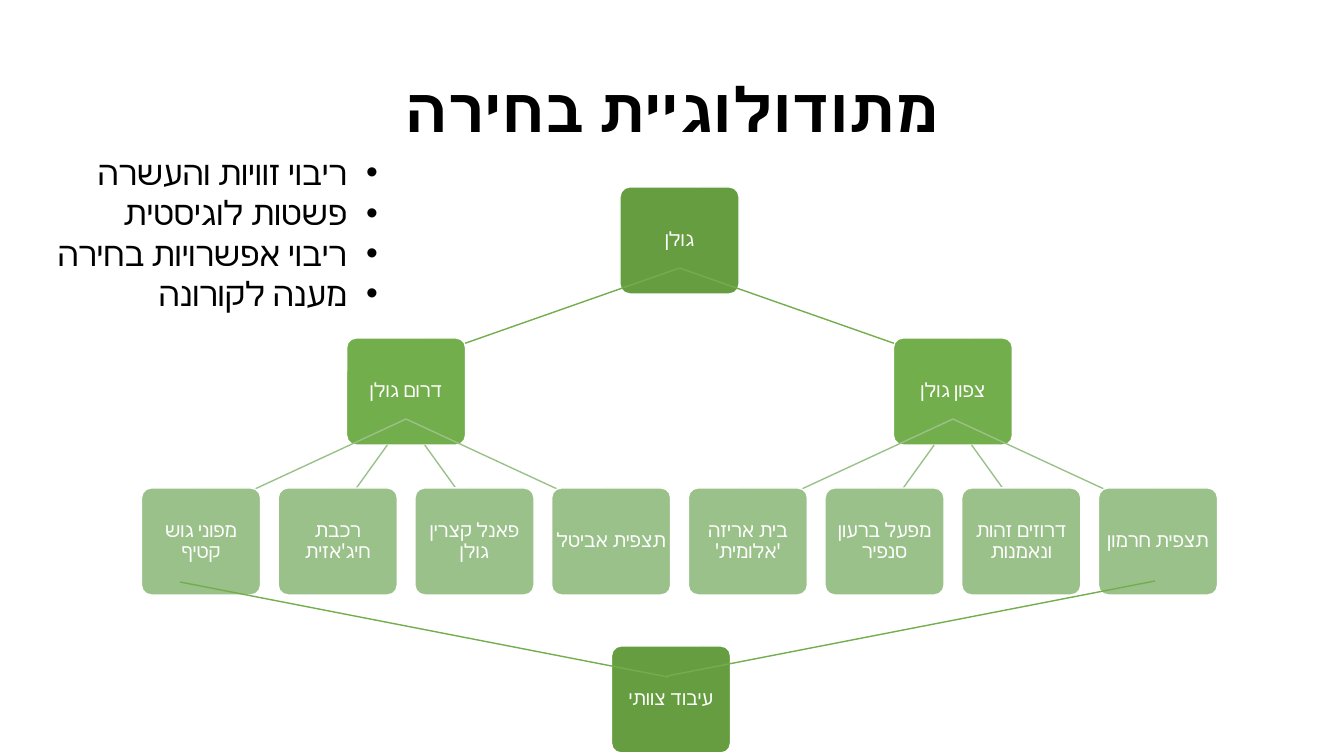
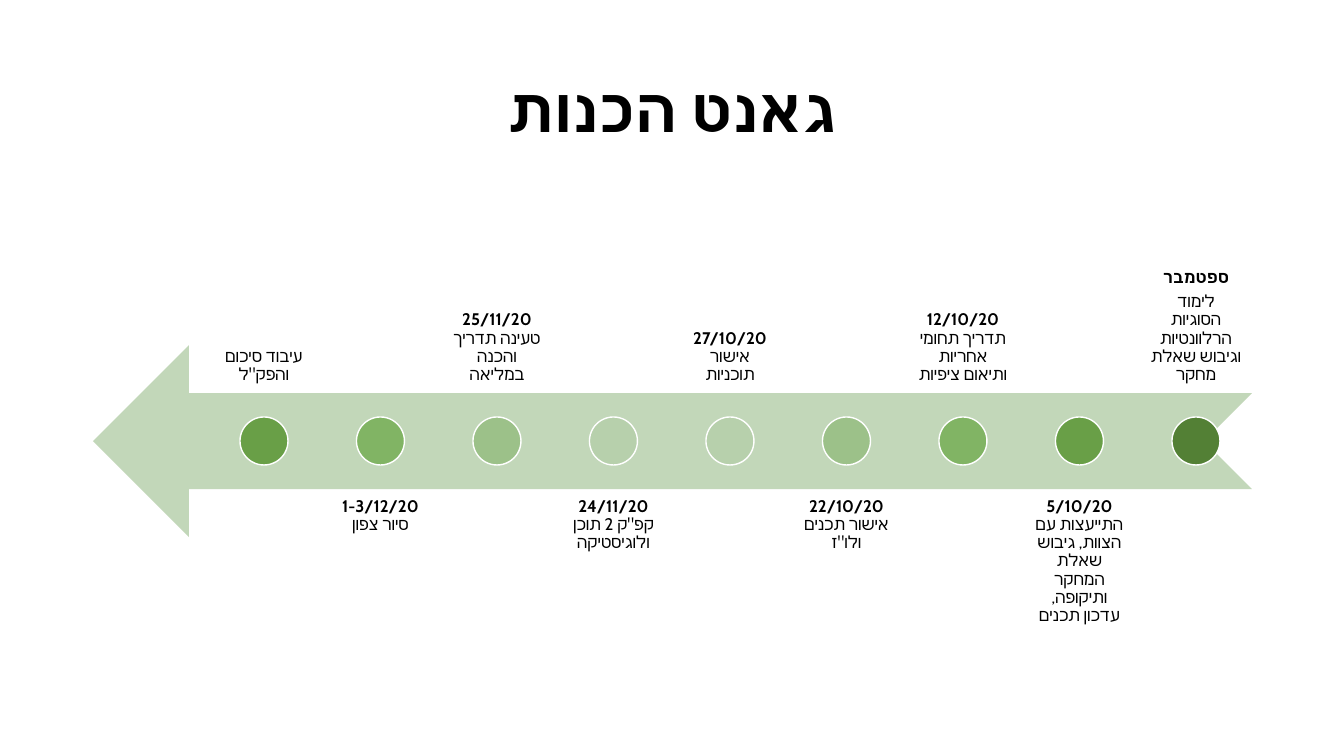
from dataclasses import dataclass

from lxml import etree
from pptx import Presentation
from pptx.dml.color import RGBColor
from pptx.enum.shapes import MSO_CONNECTOR, MSO_SHAPE
from pptx.enum.text import MSO_ANCHOR, MSO_AUTO_SIZE, PP_ALIGN
from pptx.oxml.ns import qn
from pptx.util import Pt

ROUNDED = MSO_SHAPE.ROUNDED_RECTANGLE
ARROW = MSO_SHAPE.NOTCHED_RIGHT_ARROW
OVAL = MSO_SHAPE.OVAL
STRAIGHT = MSO_CONNECTOR.STRAIGHT
TOP, MIDDLE, BOTTOM = MSO_ANCHOR.TOP, MSO_ANCHOR.MIDDLE, MSO_ANCHOR.BOTTOM
NO_AUTOFIT = MSO_AUTO_SIZE.NONE
CENTER, JUSTIFY = PP_ALIGN.CENTER, PP_ALIGN.JUSTIFY

SLIDE_W, SLIDE_H = 1344, 756
SCALE = 12192000 / SLIDE_W


@dataclass(frozen=True)
class Theme:
    font: str = "Cabin"
    text: str = "000000"
    white: str = "FFFFFF"
    root: str = "669D40"
    branch: str = "73AE4C"
    leaf: str = "9BC18A"
    arrow: str = "C2D7B9"
    title_pt: int = 44
    bullet_pt: int = 24
    box_pt: int = 14
    label_pt: int = 12
    line_pt: int = 1
    leading: float = 0.9
    after_pt: float = 4.2


THEME = Theme()

TITLE_BOX = (93, 40, 1159, 146)

METHOD_TITLE = "מתודולוגיית בחירה"
REASONS = [
    "ריבוי זוויות והעשרה",
    "פשטות לוגיסטית",
    "ריבוי אפשרויות בחירה",
    "מענה לקורונה",
]
REASONS_BOX = (14, 147, 374, 173)
REASONS_INDENT = 31
ROOT = "גולן"
REGIONS = [
    ("דרום גולן", ["מפוני גוש קטיף", "רכבת חיג'אזית", "פאנל קצרין גולן", "תצפית אביטל"]),
    ("צפון גולן", ["בית אריזה 'אלומית'", "מפעל ברעון סנפיר", "דרוזים זהות ונאמנות", "תצפית חרמון"]),
]
DEBRIEF = "עיבוד צוותי"
DEBRIEF_X, DEBRIEF_Y = 671, 646
DEBRIEF_LINES = [(667, 676, 1155, 581), (180, 582, 668, 677)]
LEVEL_Y = (187, 338, 488)
LEAF_FIRST_X, LEAF_LAST_X = 201, 1158
BOX_W, BOX_H, BOX_INSET = 119, 107, 0
EDGE_OUT, EDGE_IN = 81, 26

PLAN_TITLE = "גאנט הכנות"
STEPS = [
    ("538035", [("ספטמבר", ""), ("", "לימוד הסוגיות הרלוונטיות וגיבוש שאלת מחקר")]),
    ("699F47", [("5/10/20", "התייעצות עם הצוות, גיבוש שאלת המחקר ותיקופה, עדכון תכנים")]),
    ("81B464", [("12/10/20", "תדריך תחומי אחריות ותיאום ציפיות")]),
    ("9CC189", [("22/10/20", "אישור תכנים ולו\"ז")]),
    ("B7D0AC", [("27/10/20", "אישור תוכניות")]),
    ("B7D0AC", [("24/11/20", "קפ\"ק 2 תוכן ולוגיסטיקה")]),
    ("9CC189", [("25/11/20", "טעינה תדריך והכנה במליאה")]),
    ("81B464", [("1-3/12/20", "סיור צפון")]),
    ("699F47", [("", "עיבוד סיכום והפק\"ל")]),
]
ARROW_BOX = (93, 345, 1159, 192)
STEP_FIRST_X, STEP_LAST_X = 1196, 264
DOT, DOT_Y = 48, 417
LABEL_W, LABEL_H, LABEL_INSET = 111, 192, 10
LABEL_Y = (202, 488)


def px(value):
    return round(value * SCALE)


def rgb(value):
    return RGBColor.from_string(value)


def style_run(r, size, color, bold=False):
    f = r.font
    f.name, f.size, f.bold = THEME.font, Pt(size), bold
    f.color.rgb = rgb(color)
    etree.SubElement(r._r.get_or_add_rPr(), qn("a:cs")).set("typeface", THEME.font)


def style_paragraph(p, align, leading, after=0):
    p.alignment, p.line_spacing = align, leading
    p.space_before, p.space_after = Pt(0), Pt(after)


def set_rtl(p, indent=0):
    pPr = p._p.get_or_add_pPr()
    pPr.set("rtl", "1")
    if indent:
        pPr.set("marL", str(px(indent)))
        pPr.set("indent", str(-px(indent)))


def set_frame(tf, anchor, inset=None):
    tf.word_wrap, tf.auto_size, tf.vertical_anchor = True, NO_AUTOFIT, anchor
    if inset is not None:
        tf.margin_left = tf.margin_right = tf.margin_top = tf.margin_bottom = px(inset)


def place(sp, box):
    sp.left, sp.top, sp.width, sp.height = map(px, box)


def add_slide(prs, layout, title):
    s = prs.slides.add_slide(prs.slide_layouts[layout])
    sp = s.shapes.title
    place(sp, TITLE_BOX)
    set_frame(sp.text_frame, MIDDLE)
    sp.text_frame.text = title
    p = sp.text_frame.paragraphs[0]
    style_paragraph(p, CENTER, THEME.leading)
    style_run(p.runs[0], THEME.title_pt, THEME.text, True)
    return s


def add_shape(s, kind, box, fill, outlined=True):
    sp = s.shapes.add_shape(kind, *map(px, box))
    sp.shadow.inherit = False
    sp.fill.solid()
    sp.fill.fore_color.rgb = rgb(fill)
    if outlined:
        sp.line.color.rgb, sp.line.width = rgb(THEME.white), Pt(THEME.line_pt)
    else:
        sp.line.fill.background()
    return sp


def add_line(s, ends, color):
    c = s.shapes.add_connector(STRAIGHT, *map(px, ends))
    c.line.color.rgb, c.line.width = rgb(color), Pt(THEME.line_pt)
    etree.SubElement(c._element.spPr, qn("a:effectLst"))


def add_box(s, text, x, y, fill):
    sp = add_shape(s, ROUNDED, (x - BOX_W / 2, y, BOX_W, BOX_H), fill)
    sp.adjustments[0] = 0.09
    set_frame(sp.text_frame, MIDDLE, BOX_INSET)
    sp.text_frame.text = text
    p = sp.text_frame.paragraphs[0]
    set_rtl(p)
    style_paragraph(p, CENTER, THEME.leading)
    style_run(p.runs[0], THEME.box_pt, THEME.white)


def add_edge(s, parent_x, child_x, level, color, inner=False):
    y1, y2 = LEVEL_Y[level] + EDGE_OUT, LEVEL_Y[level + 1] + EDGE_IN
    slope = (child_x - parent_x) / (y2 - y1)
    top = LEVEL_Y[level] + BOX_H if inner else y1
    end = LEVEL_Y[level + 1] if inner else y2
    add_line(s, (parent_x + slope * (top - y1), top, parent_x + slope * (end - y1), end), color)


def add_tree(s):
    count = sum(len(leaves) for _, leaves in REGIONS)
    pitch = (LEAF_LAST_X - LEAF_FIRST_X) / (count - 1)
    root_x = (LEAF_FIRST_X + LEAF_LAST_X) / 2
    add_box(s, ROOT, root_x, LEVEL_Y[0], THEME.root)
    first = 0
    for region, leaves in REGIONS:
        xs = [LEAF_FIRST_X + (first + i) * pitch for i in range(len(leaves))]
        first += len(leaves)
        x = (xs[0] + xs[-1]) / 2
        add_edge(s, root_x, x, 0, THEME.branch)
        add_box(s, region, x, LEVEL_Y[1], THEME.branch)
        for leaf, leaf_x in zip(leaves, xs):
            add_edge(s, x, leaf_x, 1, THEME.leaf, leaf_x not in (xs[0], xs[-1]))
            add_box(s, leaf, leaf_x, LEVEL_Y[2], THEME.leaf)
    add_box(s, DEBRIEF, DEBRIEF_X, DEBRIEF_Y, THEME.root)
    for ends in DEBRIEF_LINES:
        add_line(s, ends, THEME.branch)


def add_reasons(s):
    sp = s.placeholders[1]
    place(sp, REASONS_BOX)
    tf = sp.text_frame
    set_frame(tf, TOP)
    tf.text = "\n".join(REASONS)
    for p in tf.paragraphs:
        set_rtl(p, REASONS_INDENT)
        style_paragraph(p, JUSTIFY, 1.0)
        style_run(p.runs[0], THEME.bullet_pt, THEME.text)


def add_label(s, paragraphs, x, below):
    box = (x - LABEL_W / 2, LABEL_Y[below], LABEL_W, LABEL_H)
    tf = s.shapes.add_textbox(*map(px, box)).text_frame
    set_frame(tf, TOP if below else BOTTOM, LABEL_INSET)
    for i, (date, task) in enumerate(paragraphs):
        p = tf.add_paragraph() if i else tf.paragraphs[0]
        style_paragraph(p, CENTER, THEME.leading, THEME.after_pt)
        for text, bold in ((date, True), (f" {task}" if date and task else task, False)):
            if text:
                r = p.add_run()
                r.text = text
                style_run(r, THEME.label_pt, THEME.text, bold)


def add_timeline(s):
    add_shape(s, ARROW, ARROW_BOX, THEME.arrow, False).rotation = 180
    pitch = (STEP_LAST_X - STEP_FIRST_X) / (len(STEPS) - 1)
    for i, (color, paragraphs) in enumerate(STEPS):
        x = STEP_FIRST_X + i * pitch
        add_label(s, paragraphs, x, i % 2)
        add_shape(s, OVAL, (x - DOT / 2, DOT_Y, DOT, DOT), color)


def main():
    prs = Presentation()
    prs.slide_width, prs.slide_height = px(SLIDE_W), px(SLIDE_H)
    s = add_slide(prs, 1, METHOD_TITLE)
    add_tree(s)
    add_reasons(s)
    add_timeline(add_slide(prs, 5, PLAN_TITLE))
    prs.save("out.pptx")


if __name__ == "__main__":
    main()
